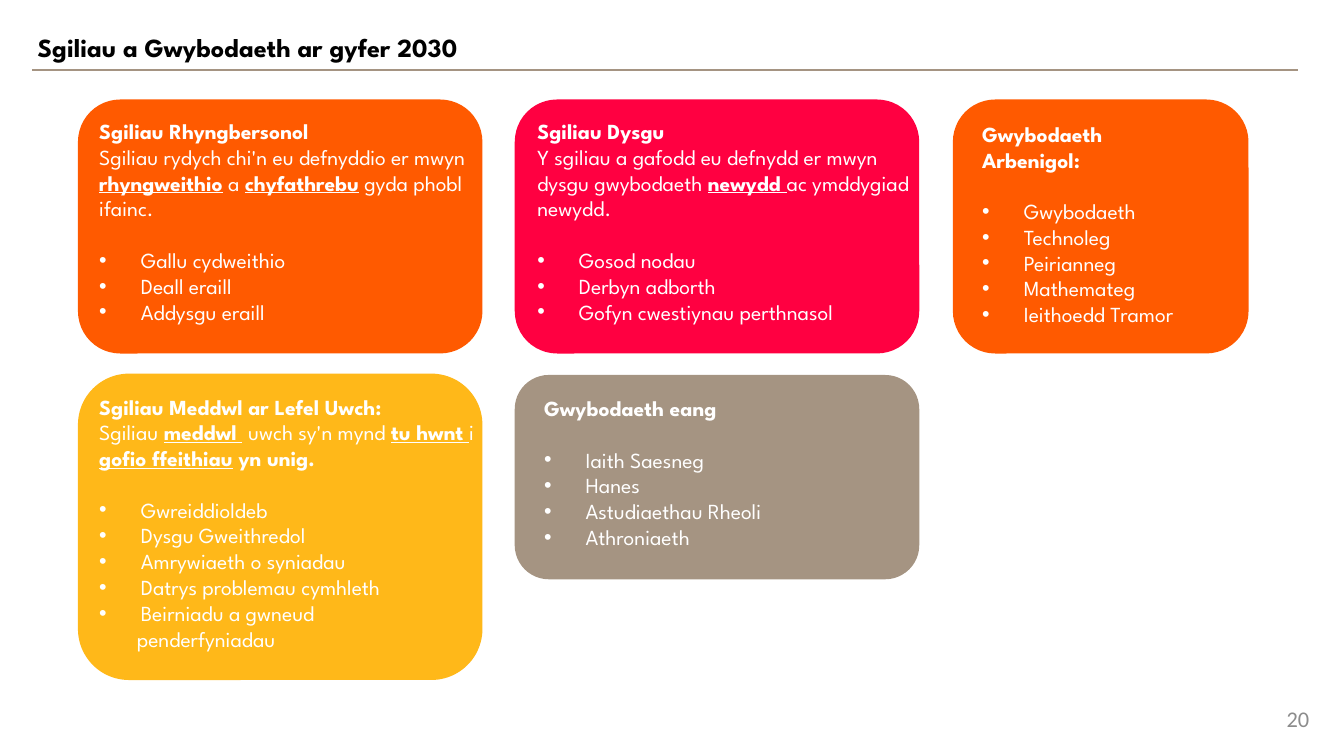
from lxml import etree
from pptx import Presentation
from pptx import util as u
from pptx.dml.color import RGBColor
from pptx.enum import shapes, text
from pptx.oxml import ns

COLOURS = {
    "orange": "FF5A00", "yellow": "FFB819", "red": "FF0041", "taupe": "A59482",
    "white": "FFFFFF", "black": "000000", "grey": "8C8C8C",
}
FONT = "League Spartan"
SIZE = 11.5
LINE_HEIGHT = 13.8
INDENT = 0.31
PLAIN, BOLD, KEY = (False, False), (True, False), (True, True)

LEFT, MIDDLE, RIGHT = 0.58, 3.83, 7.09
TOP, BOTTOM = 0.74, 2.78
WIDE, NARROW = 3.01, 2.2

CARDS = [
    {"colour": "orange", "box": (LEFT, TOP, WIDE, 1.89), "inset": (0.06, 0.09), "text_width": 2.94,
     "headings": ["Sgiliau Rhyngbersonol"],
     "intro": [("Sgiliau rydych chi'n eu defnyddio er mwyn ", PLAIN), ("rhyngweithio", KEY),
               (" a ", PLAIN), ("chyfathrebu", KEY), (" gyda phobl ifainc.", PLAIN)],
     "bullets": ["Gallu cydweithio", "Deall eraill", "Addysgu eraill"]},
    {"colour": "yellow", "box": (LEFT, BOTTOM, WIDE, 2.28), "inset": (0.06, 0.1), "text_width": 3.26,
     "headings": ["Sgiliau Meddwl ar Lefel Uwch:"],
     "intro": [("Sgiliau ", PLAIN), ("meddwl ", KEY), (" ", BOLD), ("uwch sy'n mynd ", PLAIN),
               ("tu hwnt ", KEY), ("i ", PLAIN), ("gofio ffeithiau", KEY), (" yn unig.", BOLD)],
     "bullets": ["Gwreiddioldeb", "Dysgu Gweithredol", "Amrywiaeth o syniadau",
                 "Datrys problemau cymhleth", "Beirniadu a gwneud"],
     "continuation": "penderfyniadau"},
    {"colour": "red", "box": (MIDDLE, TOP, WIDE, 1.89), "inset": (0.07, 0.09), "text_width": 3.06,
     "headings": ["Sgiliau Dysgu"],
     "intro": [("Y sgiliau a gafodd eu defnydd er mwyn dysgu gwybodaeth ", PLAIN),
               ("newydd ", KEY), ("ac ymddygiad newydd.", PLAIN)],
     "bullets": ["Gosod nodau", "Derbyn adborth", "Gofyn cwestiynau perthnasol"]},
    {"colour": "taupe", "box": (MIDDLE, BOTTOM + 0.01, WIDE, 1.52), "inset": (0.12, 0.1),
     "text_width": 2.94, "headings": ["Gwybodaeth eang"],
     "bullets": ["Iaith Saesneg", "Hanes", "Astudiaethau Rheoli", "Athroniaeth"]},
    {"colour": "orange", "box": (RIGHT, TOP, NARROW, 1.89), "inset": (0.12, 0.11),
     "text_width": 2.08, "headings": ["Gwybodaeth", "Arbenigol:"],
     "bullets": ["Gwybodaeth", "Technoleg", "Peirianneg", "Mathemateg", "Ieithoedd Tramor"]},
]


def rgb(name):
    return RGBColor.from_string(COLOURS[name])


def inches(values):
    return [u.Inches(value) for value in values]


def format_span(span, size, colour, style=PLAIN, font=FONT):
    span.font.name = font
    span.font.size = u.Pt(size)
    span.font.color.rgb = rgb(colour)
    span.font.bold, span.font.underline = style


def set_indent(para, margin, bullet=False):
    properties = para._p.get_or_add_pPr()
    properties.set("marL", str(u.Inches(margin)))
    if bullet:
        properties.set("indent", str(-u.Inches(margin)))
        etree.SubElement(properties, ns.qn("a:buFont")).set("typeface", "Arial")
        etree.SubElement(properties, ns.qn("a:buChar")).set("char", "•")


def add_header(page, box):
    left, top, width, height = box
    title = page.shapes.title
    title.left, title.top, title.width, title.height = inches(box)
    frame = title.text_frame
    frame.text = "Sgiliau a Gwybodaeth ar gyfer 2030"
    frame.auto_size = text.MSO_AUTO_SIZE.NONE
    frame.vertical_anchor = text.MSO_ANCHOR.MIDDLE
    para = frame.paragraphs[0]
    para.alignment = text.PP_ALIGN.LEFT
    format_span(para.runs[0], 14, "black", BOLD)

    baseline = top + height
    rule = page.shapes.add_connector(
        shapes.MSO_CONNECTOR.STRAIGHT,
        *inches((left + 0.06, baseline, left + width, baseline)))
    rule.line.color.rgb = rgb("taupe")
    rule.line.width = u.Pt(1)
    etree.SubElement(rule._element.spPr, ns.qn("a:effectLst"))


def add_card(page, card):
    left, top, width, height = card["box"]
    panel = page.shapes.add_shape(shapes.MSO_SHAPE.ROUNDED_RECTANGLE, *inches(card["box"]))
    panel.shadow.inherit = False
    panel.fill.solid()
    panel.fill.fore_color.rgb = rgb(card["colour"])
    panel.line.fill.background()

    across, down = card["inset"]
    box = page.shapes.add_textbox(
        *inches((left + across, top + down, card["text_width"], height - 2 * down)))
    frame = box.text_frame
    frame.word_wrap = True

    rows = [[(heading, BOLD)] for heading in card["headings"]]
    if "intro" in card:
        rows.append(card["intro"])
    first_bullet = len(rows)
    rows += [[(bullet, PLAIN)] for bullet in card["bullets"]]
    after_bullets = len(rows)
    if "continuation" in card:
        rows.append([(card["continuation"], PLAIN)])

    for index, row in enumerate(rows):
        para = frame.add_paragraph() if index else frame.paragraphs[0]
        if first_bullet <= index < after_bullets:
            set_indent(para, INDENT, bullet=True)
        elif index == after_bullets:
            set_indent(para, INDENT - 0.03)
        if index == first_bullet:
            para.space_before = u.Pt(LINE_HEIGHT)
        for words, style in row:
            span = para.add_run()
            span.text = words
            format_span(span, SIZE, "white", style)


def add_page_number(page, box):
    frame = page.shapes.add_textbox(*inches(box)).text_frame
    frame.word_wrap = True
    frame.vertical_anchor = text.MSO_ANCHOR.MIDDLE
    frame.text = "20"
    para = frame.paragraphs[0]
    para.alignment = text.PP_ALIGN.RIGHT
    format_span(para.runs[0], 12, "grey", font="Calibri")


def main():
    deck = Presentation()
    deck.slide_width = u.Inches(10)
    deck.slide_height = deck.slide_width * 9 // 16
    page = deck.slides.add_slide(deck.slide_layouts[5])
    add_header(page, (0.18, 0.18, 9.48, 0.34))
    for card in CARDS:
        add_card(page, card)
    add_page_number(page, (7.59, 5.2, 2.25, 0.3))
    deck.save("out.pptx")


if __name__ == "__main__":
    main()
